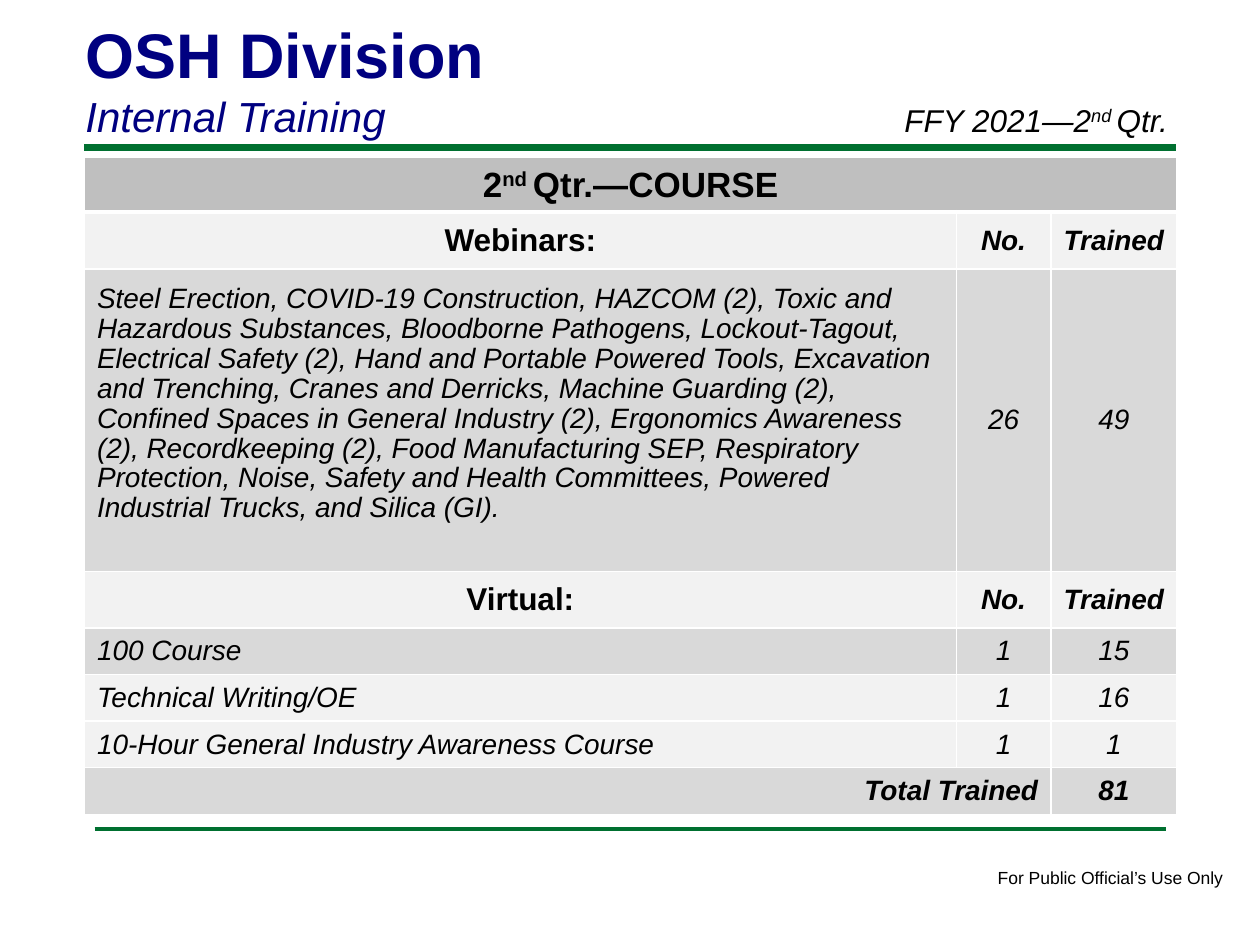
from lxml.etree import SubElement
from pptx import Presentation
from pptx.dml.color import RGBColor
from pptx.enum.shapes import MSO_CONNECTOR
from pptx.enum.text import MSO_ANCHOR as Anchor, PP_ALIGN as Align
from pptx.oxml.ns import qn
from pptx.util import Inches, Pt

COLORS = {
    "green": "007030", "navy": "000080", "black": "000000", "white": "FFFFFF",
    "heading": "BFBFBF", "dark": "D9D9D9", "light": "F2F2F2",
}
COLUMN_WIDTHS = [6.92, 0.75, 1]
ROW_HEIGHTS = [0.42, 0.45, 2.4, 0.45] + [0.37] * 4
WEBINARS = (
    "Steel Erection, COVID-19 Construction, HAZCOM (2), Toxic and Hazardous "
    "Substances, Bloodborne Pathogens, Lockout-Tagout, Electrical Safety (2), "
    "Hand and Portable Powered Tools, Excavation and Trenching, Cranes and "
    "Derricks, Machine Guarding (2), Confined Spaces in General Industry (2), "
    "Ergonomics Awareness (2), Recordkeeping (2), Food Manufacturing SEP, "
    "Respiratory Protection, Noise, Safety and Health Committees, Powered "
    "Industrial Trucks, and Silica (GI)."
)
COURSES = [
    ("heading", ["2nd Qtr.—COURSE", "", ""]),
    ("section", ["Webinars:", "No.", "Trained"]),
    ("dark", [WEBINARS, "26", "49"]),
    ("section", ["Virtual:", "No.", "Trained"]),
    ("dark", ["100 Course", "1", "15"]),
    ("light", ["Technical Writing/OE", "1", "16"]),
    ("light", ["10-Hour General Industry Awareness Course", "1", "1"]),
    ("total", ["Total Trained", "", "81"]),
]
FILLS = {"section": "light", "total": "dark"}


def rgb(name):
    return RGBColor.from_string(COLORS[name])


def write(paragraph, text, size, color="black", bold=False, italic=False,
          align=Align.LEFT):
    before, ordinal, after = text.partition("nd Qtr.")
    if ordinal:
        for part in (before, "nd ", "Qtr." + after):
            paragraph.add_run().text = part
        paragraph.runs[1]._r.get_or_add_rPr().set("baseline", "30000")
    else:
        paragraph.text = text
    paragraph.alignment = align
    for run in paragraph.runs:
        run.font.name = "Arial"
        run.font.size = Pt(size)
        run.font.bold = bold
        run.font.italic = italic
        run.font.color.rgb = rgb(color)


def add_rule(slide, left, right, y, width):
    rule = slide.shapes.add_connector(
        MSO_CONNECTOR.STRAIGHT, Inches(left), Inches(y), Inches(right), Inches(y))
    rule.line.color.rgb = rgb("green")
    rule.line.width = Pt(width)
    SubElement(rule._element.spPr, qn("a:effectLst"))


def add_text(slide, left, top, width, height, wrap=True, anchor=Anchor.TOP):
    frame = slide.shapes.add_textbox(
        Inches(left), Inches(top), Inches(width), Inches(height)).text_frame
    frame.word_wrap = wrap
    frame.vertical_anchor = anchor
    return frame


def add_borders(cell, top=1, bottom=1):
    properties = cell._tc.get_or_add_tcPr()
    for side, width in (("L", 1), ("R", 1), ("T", top), ("B", bottom)):
        border = SubElement(properties, qn(f"a:ln{side}"), w=str(Pt(width)))
        fill = SubElement(border, qn("a:solidFill"))
        SubElement(fill, qn("a:srgbClr"), val=COLORS["white"])


def style_cell(cell, text, kind, row, column):
    add_borders(cell, top=3 if row == 1 else 1, bottom=3 if row == 0 else 1)
    cell.fill.solid()
    cell.fill.fore_color.rgb = rgb(FILLS.get(kind, kind))
    cell.vertical_anchor = Anchor.MIDDLE
    if not text:
        return
    titled = kind in ("heading", "section")
    size, align = 16, Align.CENTER
    if column == 0:
        size = {"heading": 20, "section": 18}.get(kind, 16)
        if not titled:
            align = Align.RIGHT if kind == "total" else Align.LEFT
    write(cell.text_frame.paragraphs[0], text, size, align=align,
          bold=titled or kind == "total", italic=column > 0 or not titled)


def add_course_table(slide):
    table = slide.shapes.add_table(
        len(ROW_HEIGHTS), len(COLUMN_WIDTHS), Inches(0.67), Inches(1.25),
        Inches(sum(COLUMN_WIDTHS)), Inches(sum(ROW_HEIGHTS))).table
    for column, width in zip(table.columns, COLUMN_WIDTHS):
        column.width = Inches(width)
    for row, height in zip(table.rows, ROW_HEIGHTS):
        row.height = Inches(height)
    for row, (kind, texts) in enumerate(COURSES):
        for column, text in enumerate(texts):
            style_cell(table.cell(row, column), text, kind, row, column)
    table.cell(0, 0).merge(table.cell(0, 2))
    table.cell(7, 0).merge(table.cell(7, 1))
    webinars = table.cell(2, 0)
    webinars.margin_bottom = Inches(0.3)
    webinars.text_frame.paragraphs[0].line_spacing = 0.96


def main():
    deck = Presentation()
    deck.slide_width, deck.slide_height = Inches(10), Inches(7.5)
    slide = deck.slides.add_slide(deck.slide_layouts[6])

    add_rule(slide, 0.67, 9.33, 1.17, 4)
    add_rule(slide, 0.75, 9.25, 6.58, 2)
    notice = add_text(slide, 7.82, 6.83, 2.01, 0.27, wrap=False)
    write(notice.paragraphs[0], "For Public Official’s Use Only", 10)

    title = add_text(slide, 0.58, 0.06, 8.25, 1.11, anchor=Anchor.BOTTOM)
    write(title.paragraphs[0], "OSH Division", 36, "navy", bold=True)
    write(title.add_paragraph(), "Internal Training", 24, "navy", italic=True)

    add_course_table(slide)
    quarter = add_text(slide, 7.08, 0.75, 2.5, 0.4)
    write(quarter.paragraphs[0], "FFY 2021—2nd Qtr.", 18, italic=True)
    deck.save("out.pptx")


if __name__ == "__main__":
    main()
